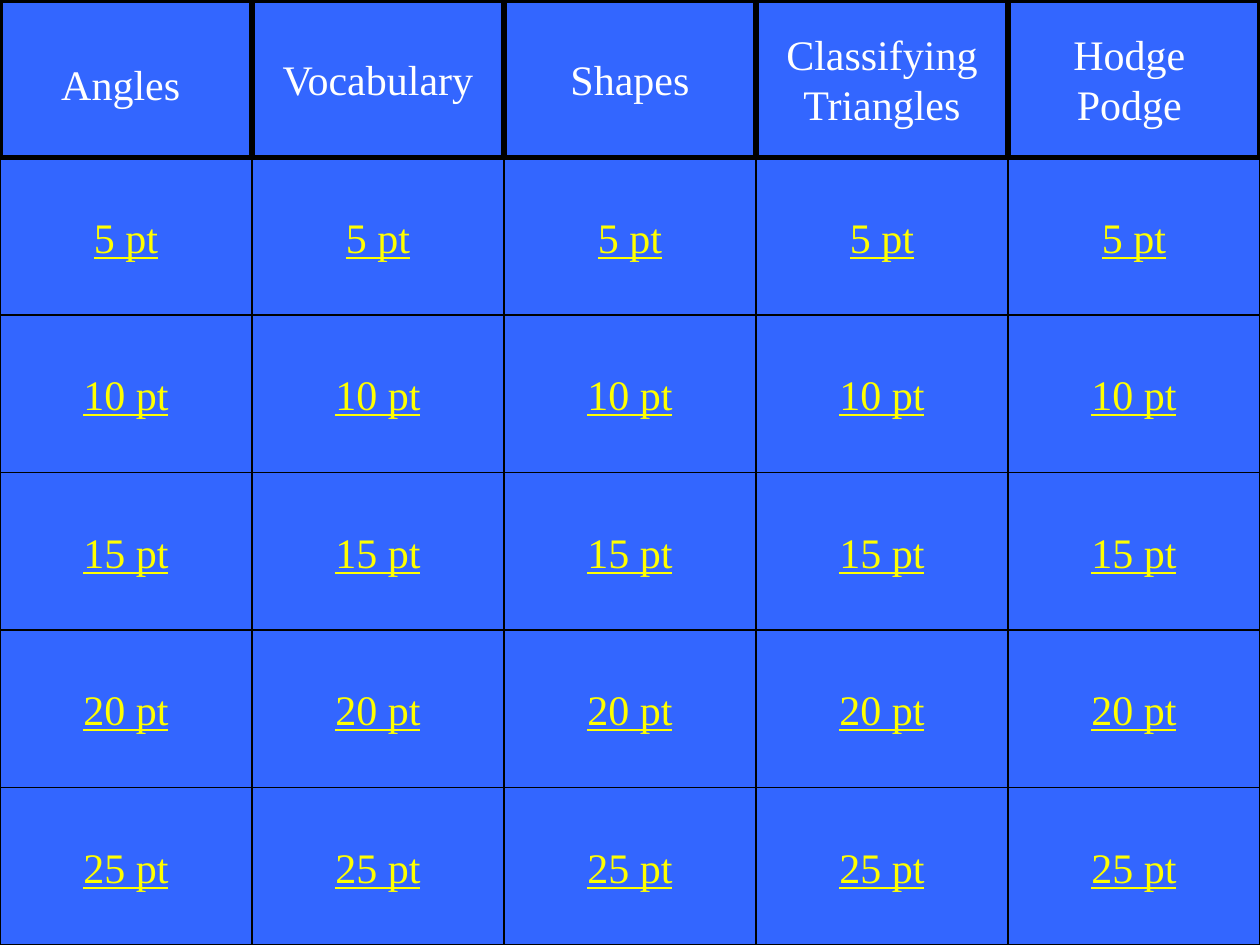
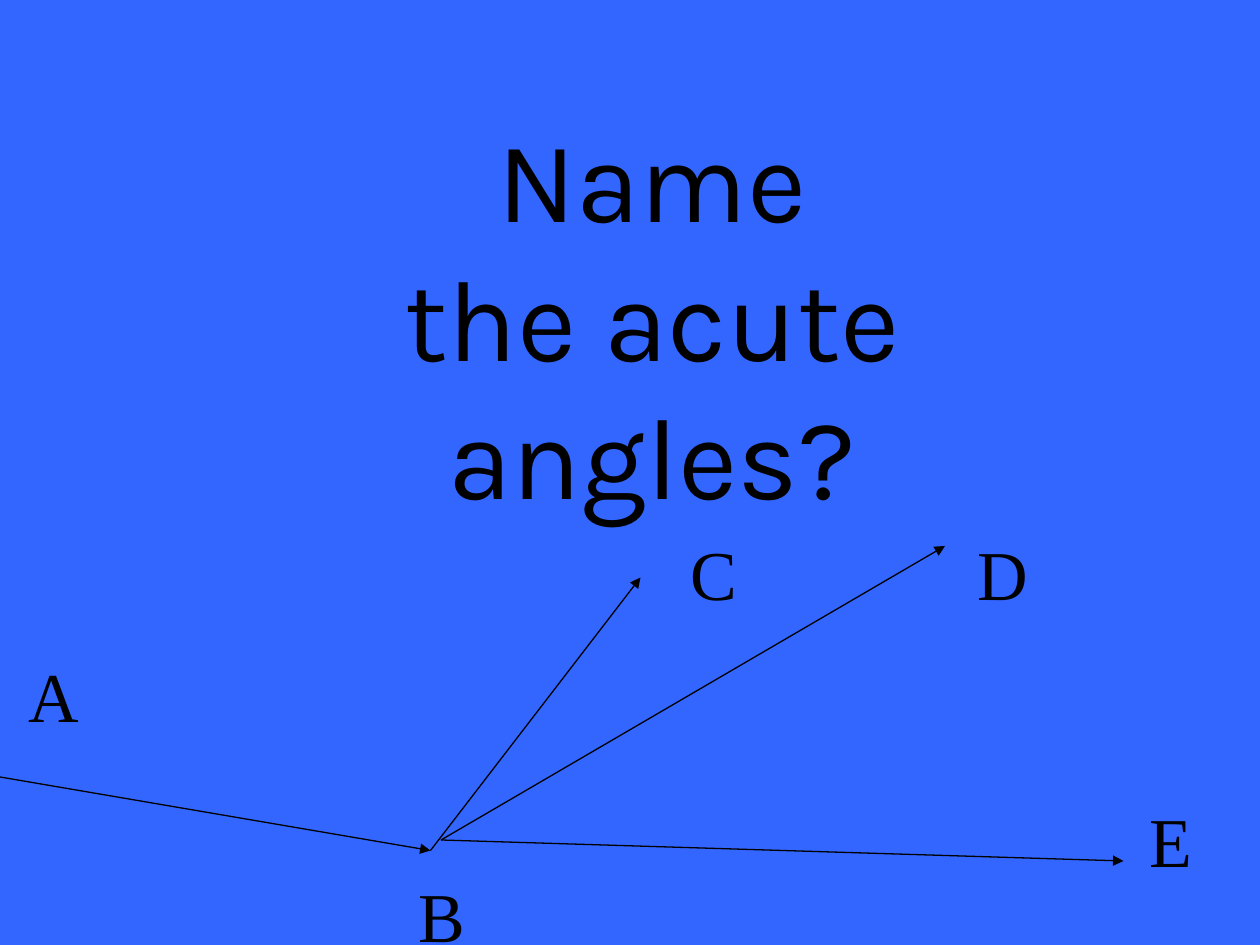
"""Build a geometry quiz board and its first question slide."""
import pptx
import pptx.dml.color
import pptx.enum.shapes
import pptx.enum.text
import pptx.oxml
import pptx.oxml.ns
import pptx.util

BLUE = pptx.dml.color.RGBColor(0x33, 0x66, 0xFF)
YELLOW = pptx.dml.color.RGBColor(0xFF, 0xFF, 0x00)
WHITE = pptx.dml.color.RGBColor(0xFF, 0xFF, 0xFF)
BLACK = pptx.dml.color.RGBColor(0x00, 0x00, 0x00)
SERIF = "Times New Roman"
SANS = "Karla"
SHAPES = pptx.enum.shapes.MSO_SHAPE

WIDTH, HEIGHT = 960, 720
CATEGORIES = ["Angles", "Vocabulary", "Shapes", "Classifying\nTriangles", "Hodge\nPodge"]
CAPTION_BOXES = {"Angles": (37, 40, 110, 48), "Hodge\nPodge": (808, 17, 105, 86)}
POINTS = [5, 10, 15, 20, 25]

QUESTION = "Name the acute angles?"
QUESTION_BOX = (296, 77, 402, 326)
RAYS = [
    ((0, 592), (328, 648)),
    ((328, 648), (488, 440)),
    ((336, 640), (720, 416)),
    ((336, 640), (856, 656)),
]
LABEL_HEIGHT = 74
LABELS = [
    ("A", 12, 492, 58),
    ("B", 309, 660, 55),
    ("C", 516, 399, 55),
    ("D", 735, 399, 58),
    ("E", 866, 603, 52),
]


def px(*lengths):
    return [pptx.util.Emu(n * 9525) for n in lengths]


def write(sp, text, size=24, color=BLACK, font=SERIF, underline=None, wrap=False):
    tf = sp.text_frame
    tf.text = text
    tf.word_wrap = wrap
    tf.auto_size = pptx.enum.text.MSO_AUTO_SIZE.NONE
    tf.vertical_anchor = pptx.enum.text.MSO_ANCHOR.MIDDLE
    for p in tf.paragraphs:
        p.alignment = pptx.enum.text.PP_ALIGN.CENTER
        for r in p.runs:
            r.font.size = pptx.util.Pt(size)
            r.font.name = font
            r.font.color.rgb = color
            r.font.underline = underline


def add_cell(slide, kind, box, line_width):
    sp = slide.shapes.add_shape(kind, *px(*box))
    sp.shadow.inherit = False
    sp.fill.solid()
    sp.fill.fore_color.rgb = BLUE
    sp.line.color.rgb = BLACK
    sp.line.width = pptx.util.Pt(line_width)
    return sp


def add_ray(slide, start, end):
    ray = slide.shapes.add_connector(
        pptx.enum.shapes.MSO_CONNECTOR.STRAIGHT, *px(*start, *end))
    ray.line.color.rgb = BLACK
    ray.line.width = pptx.util.Pt(0.75)
    tail = pptx.oxml.parse_xml(
        f'<a:tailEnd {pptx.oxml.ns.nsdecls("a")} type="triangle"/>')
    ray.line._get_or_add_ln().append(tail)
    ray._element.spPr.append(
        pptx.oxml.parse_xml(f'<a:effectLst {pptx.oxml.ns.nsdecls("a")}/>'))


def build_board(prs):
    slide = prs.slides.add_slide(prs.slide_layouts[6])
    w, h = WIDTH // len(CATEGORIES), HEIGHT // (len(POINTS) + 1)
    for col in range(len(CATEGORIES)):
        for row, points in enumerate(POINTS, start=1):
            button = add_cell(slide, SHAPES.ACTION_BUTTON_CUSTOM,
                              (col * w, row * h, w, h), 0.75)
            write(button, f"{points} pt", color=YELLOW, underline=True)
    for col, category in enumerate(CATEGORIES):
        caption = add_cell(slide, SHAPES.RECTANGLE, (col * w, 0, w, h), 3)
        if category in CAPTION_BOXES:
            caption = slide.shapes.add_textbox(*px(*CAPTION_BOXES[category]))
        write(caption, category, color=WHITE)


def build_question(prs):
    slide = prs.slides.add_slide(prs.slide_layouts[5])
    title = slide.shapes.title
    title.left, title.top, title.width, title.height = px(*QUESTION_BOX)
    write(title, QUESTION, size=66, font=SANS, wrap=True)
    for start, end in RAYS:
        add_ray(slide, start, end)
    for letter, x, y, w in LABELS:
        label = slide.shapes.add_textbox(*px(x, y, w, LABEL_HEIGHT))
        write(label, letter, size=40)


def main():
    prs = pptx.Presentation()
    prs.slide_width, prs.slide_height = px(WIDTH, HEIGHT)
    background = prs.slide_master.background.fill
    background.solid()
    background.fore_color.rgb = BLUE
    build_board(prs)
    build_question(prs)
    prs.save("out.pptx")


if __name__ == "__main__":
    main()
